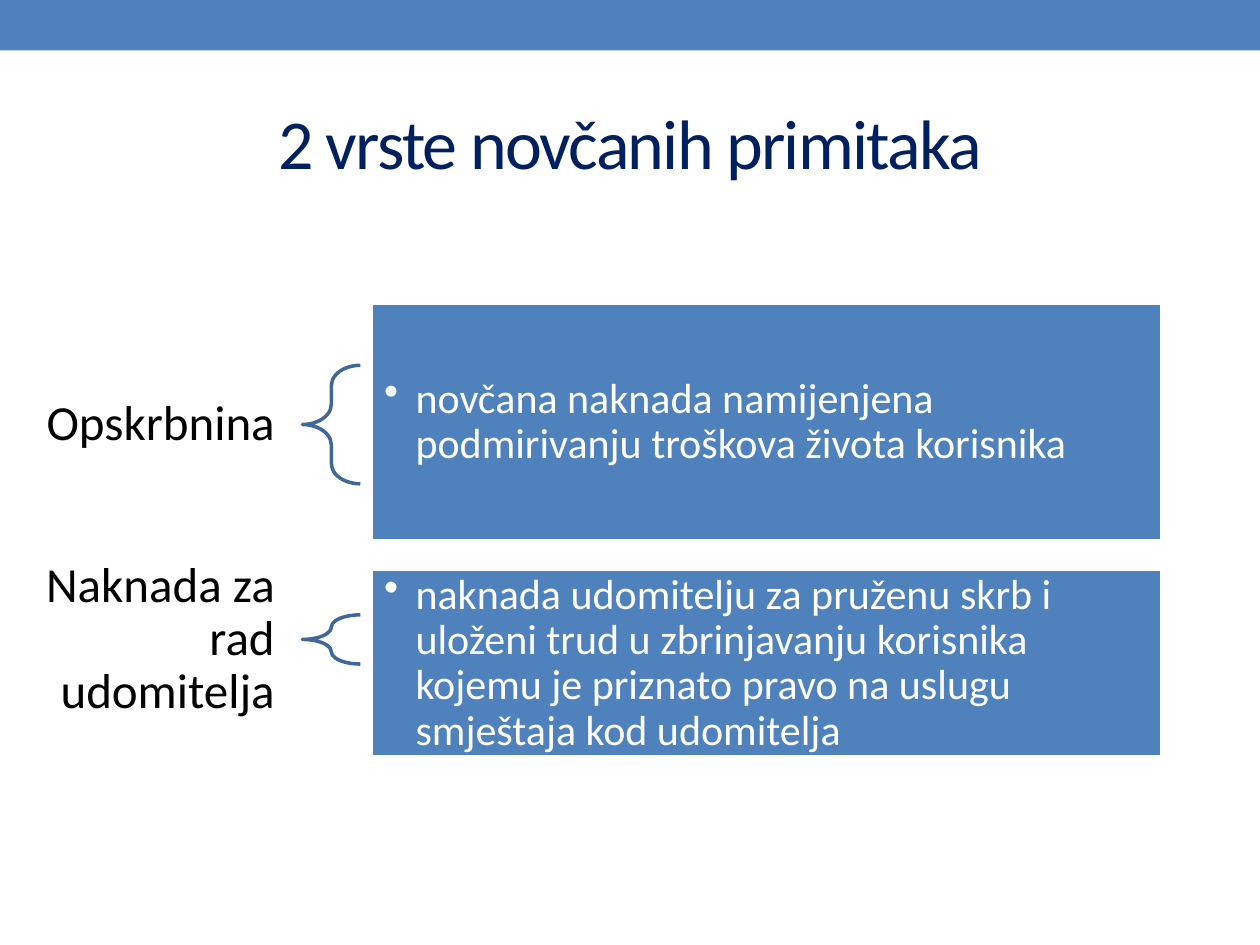
import dataclasses

import lxml.etree
import pptx
import pptx.dml.color
import pptx.enum.shapes
import pptx.enum.text
import pptx.oxml.ns
import pptx.util

SHAPES = pptx.enum.shapes.MSO_SHAPE
ALIGN = pptx.enum.text.PP_ALIGN
MIDDLE = pptx.enum.text.MSO_ANCHOR.MIDDLE

# The slide is a grid of 100 columns and 75 rows.
COLUMNS, ROWS = 100, 75
CELL = pptx.util.Inches(0.1)

BLUE, BRACE_BLUE, NAVY = "4F81BD", "3F6797", "002060"
BLACK, WHITE = "000000", "FFFFFF"


@dataclasses.dataclass
class Benefit:
    name: str
    description: str
    brace_top: float
    brace_rows: float
    panel_top: float
    panel_rows: float


BENEFITS = [
    Benefit("Opskrbnina",
            "novčana naknada namijenjena podmirivanju troškova života korisnika",
            29, 9.4, 24.1, 18.8),
    Benefit("Naknada za rad udomitelja",
            "naknada udomitelju za pruženu skrb i uloženi trud u zbrinjavanju "
            "korisnika kojemu je priznato pravo na uslugu smještaja kod udomitelja",
            48.8, 3.9, 45.2, 14.9),
]


def grid(*lengths: float) -> list[int]:
    return [round(length * CELL) for length in lengths]


def rgb(color: str) -> pptx.dml.color.RGBColor:
    return pptx.dml.color.RGBColor.from_string(color)


def add_shape(slide, kind, box: tuple, fill: str = "", line: str = ""):
    shape = slide.shapes.add_shape(kind, *grid(*box))
    shape.shadow.inherit = False
    if fill:
        shape.fill.solid()
        shape.fill.fore_color.rgb = rgb(fill)
    else:
        shape.fill.background()
    if line:
        shape.line.color.rgb = rgb(line)
        shape.line.width = pptx.util.Pt(2)
    else:
        shape.line.fill.background()
    return shape


def write_text(shape, text: str, size: float, color: str, align,
               side_inset: float, end_inset: float, line_spacing: float = 0.9,
               bullet: bool = False):
    frame = shape.text_frame
    side, end = grid(side_inset, end_inset)
    frame_format = {
        "word_wrap": True, "vertical_anchor": MIDDLE,
        "auto_size": pptx.enum.text.MSO_AUTO_SIZE.NONE,
        "margin_left": side, "margin_right": side,
        "margin_top": end, "margin_bottom": end,
    }
    for name, value in frame_format.items():
        setattr(frame, name, value)
    paragraph = frame.paragraphs[0]
    paragraph.alignment = align
    paragraph.line_spacing = line_spacing
    if bullet:
        properties = paragraph._p.get_or_add_pPr()
        indent = grid(2.5)[0]
        properties.set("marL", str(indent))
        properties.set("indent", str(-indent))
        lxml.etree.SubElement(properties, pptx.oxml.ns.qn("a:buChar"), char="•")
    run = paragraph.add_run()
    run.text = text
    for name, value in {"name": "Calibri", "size": pptx.util.Pt(size)}.items():
        setattr(run.font, name, value)
    run.font.color.rgb = rgb(color)
    return run


def add_title(slide, text: str) -> None:
    title = slide.shapes.title
    title.left, title.top, title.width, title.height = grid(5, 5.8, 90, 10.8)
    run = write_text(title, text, 40, NAVY, ALIGN.CENTER, 1, 0.5, 1.0)
    run._r.get_or_add_rPr().set("spc", "-100")


def add_benefit(slide, benefit: Benefit) -> None:
    label = slide.shapes.add_textbox(
        *grid(0.9, benefit.brace_top, 23.1, benefit.brace_rows))
    write_text(label, benefit.name, 28, BLACK, ALIGN.RIGHT, 2.2, 0.8)

    brace = add_shape(slide, SHAPES.LEFT_BRACE,
                      (24, benefit.brace_top, 4.6, benefit.brace_rows),
                      line=BRACE_BLUE)
    brace.adjustments[0] = 0.35

    panel = add_shape(slide, SHAPES.RECTANGLE,
                      (29.5, benefit.panel_top, 62.7, benefit.panel_rows),
                      fill=BLUE, line=WHITE)
    write_text(panel, benefit.description, 24, WHITE, ALIGN.LEFT, 1, 1,
               bullet=True)


def main() -> None:
    presentation = pptx.Presentation()
    presentation.slide_width, presentation.slide_height = grid(COLUMNS, ROWS)
    slide = presentation.slides.add_slide(presentation.slide_layouts[5])
    add_shape(slide, SHAPES.RECTANGLE, (0, 0, COLUMNS, 4), fill=BLUE)
    add_title(slide, "2 vrste novčanih primitaka")
    for benefit in BENEFITS:
        add_benefit(slide, benefit)
    presentation.save("out.pptx")


if __name__ == "__main__":
    main()
